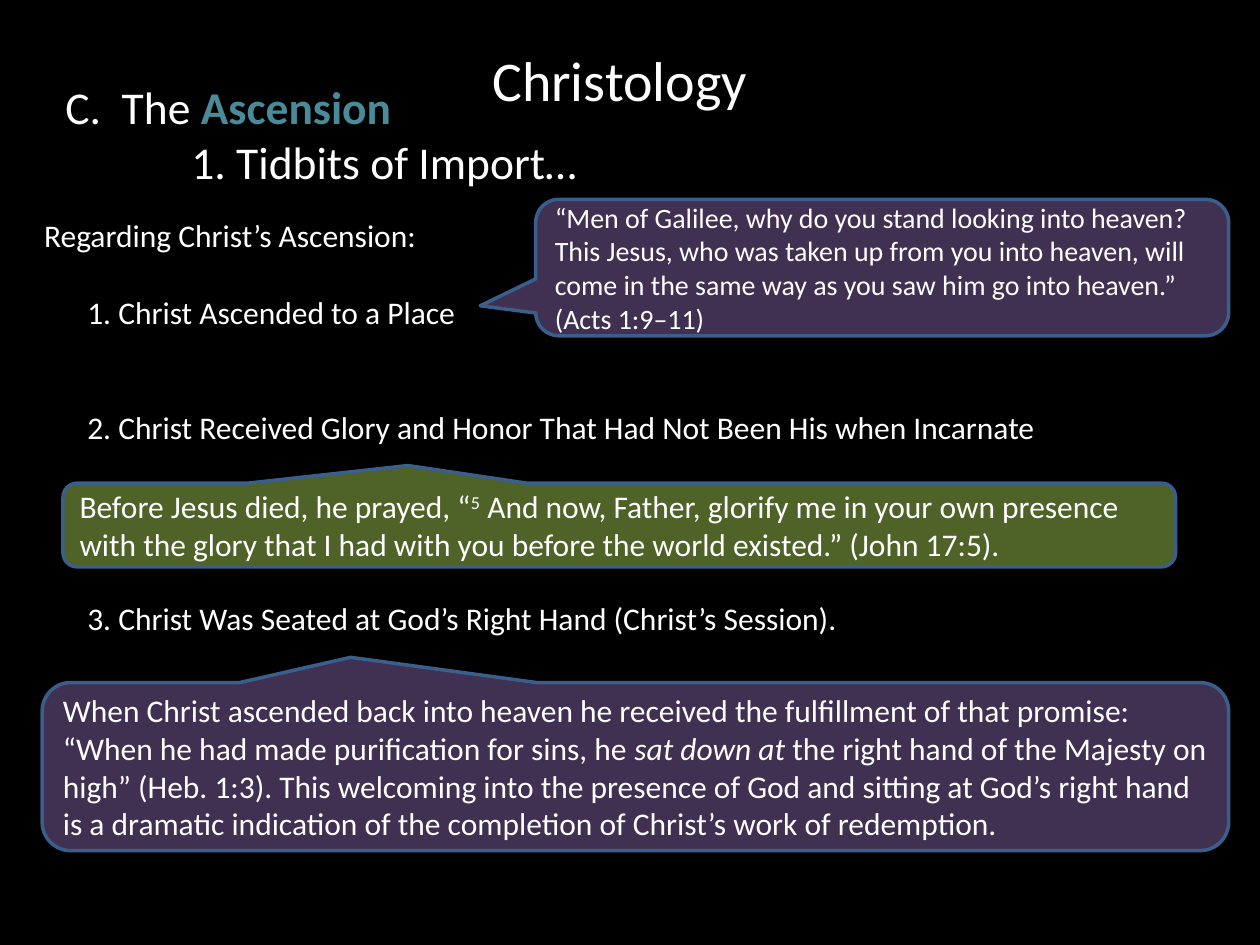
import pptx
import pptx.dml.color
import pptx.enum.shapes
import pptx.enum.text
import pptx.util

Cm = pptx.util.Cm
Pt = pptx.util.Pt
RGBColor = pptx.dml.color.RGBColor
ALIGN = pptx.enum.text.PP_ALIGN
ANCHOR = pptx.enum.text.MSO_ANCHOR

BLACK = RGBColor(0x00, 0x00, 0x00)
WHITE = RGBColor(0xFF, 0xFF, 0xFF)
TEAL = RGBColor(0x4A, 0x8B, 0x9A)
GREEN = RGBColor(0x4F, 0x62, 0x28)
PURPLE = RGBColor(0x40, 0x31, 0x52)
OUTLINE = RGBColor(0x3A, 0x5F, 0x8C)

BODY_LINE = 22  # height in points of one 18 pt line
CORNER = 0.17


def set_values(target, values):
    for name, value in values.items():
        setattr(target, name, value)


def add_span(para, text, size, **values):
    """Add a run; baseline is a percentage that raises the text."""
    baseline = values.pop("baseline", None)
    span = para.add_run()
    span.text = text
    set_values(span.font, {"name": "Calibri", "size": Pt(size)} | values)
    span.font.color.rgb = values.get("color_rgb", WHITE)
    if baseline:
        span._r.get_or_add_rPr().set("baseline", str(baseline * 1000))


def add_para(frame, spans, size, first, indent=0, **values):
    """Add a paragraph of (text, format values) spans."""
    para = frame.paragraphs[0] if first else frame.add_paragraph()
    set_values(para, {"alignment": ALIGN.LEFT} | values)
    if indent:
        para._p.get_or_add_pPr().set("marL", str(Cm(indent)))
    for text, span_values in spans:
        add_span(para, text, size, **span_values)


def fill_frame(frame, paras, size, anchor):
    """Write (spans, paragraph values) pairs into a text frame."""
    set_values(frame, {"word_wrap": True, "vertical_anchor": anchor})
    for number, (spans, values) in enumerate(paras):
        add_para(frame, spans, size, number == 0, **values)


def add_text(page, place, paras, size, anchor=ANCHOR.TOP):
    box = page.shapes.add_textbox(*map(Cm, place))
    fill_frame(box.text_frame, paras, size, anchor)


def add_callout(page, place, tip, color, paras, size=18):
    """Add a rounded callout; tip is its point relative to the centre."""
    kind = pptx.enum.shapes.MSO_SHAPE.ROUNDED_RECTANGULAR_CALLOUT
    callout = page.shapes.add_shape(kind, *map(Cm, place))
    callout.shadow.inherit = False
    for number, value in enumerate((*tip, CORNER)):
        callout.adjustments[number] = value
    callout.fill.solid()
    callout.fill.fore_color.rgb = color
    callout.line.color.rgb = OUTLINE
    callout.line.width = Pt(2)
    fill_frame(callout.text_frame, paras, size, ANCHOR.MIDDLE)


def plain(text, **values):
    return [(text, {})], values


def point(text, lines_before):
    return plain(text, indent=0.87, space_before=Pt(lines_before * BODY_LINE))


def add_headings(page):
    add_text(page, (1.7, 0, 21.59, 3.18),
             [plain("Christology", alignment=ALIGN.CENTER)], 32, ANCHOR.MIDDLE)
    add_text(page, (1.07, 1.47, 23.06, 2.49), [
        ([("C.  The ", {}), ("Ascension", {"bold": True, "color_rgb": TEAL})], {}),
        plain("1. Tidbits of Import…", indent=2.54),
    ], 26)


def add_points(page):
    add_text(page, (0.64, 4.24, 23.06, 9.5), [
        plain("Regarding Christ’s Ascension:"),
        point("1. Christ Ascended to a Place", 1),
        point("2. Christ Received Glory and Honor That Had Not Been His when Incarnate", 2),
        point("3. Christ Was Seated at God’s Right Hand (Christ’s Session).", 4),
    ], 18)


def add_quotations(page):
    add_callout(page, (1.27, 9.74, 22.43, 1.69), (-0.19, -0.71), GREEN, [([
        ("Before Jesus died, he prayed, “", {}),
        ("5", {"baseline": 30}),
        (" And now, Father, glorify me in your own presence with the glory "
         "that I had with you before the world existed.” (John 17:5).", {}),
    ], {})])
    add_callout(page, (0.85, 13.76, 23.92, 3.39), (-0.24, -0.65), PURPLE, [([
        ("When Christ ascended back into heaven he received the fulfillment of "
         "that promise: “When he had made purification for sins, he ", {}),
        ("sat down at ", {"italic": True}),
        ("the right hand of the Majesty on high” (Heb. 1:3). This welcoming into "
         "the presence of God and sitting at God’s right hand is a dramatic "
         "indication of the completion of Christ’s work of redemption.", {}),
    ], {})])
    add_callout(page, (10.8, 4.02, 13.97, 2.75), (-0.58, 0.28), PURPLE, [
        plain("“Men of Galilee, why do you stand looking into heaven?"),
        plain("This Jesus, who was taken up from you into heaven, will come in "
              "the same way as you saw him go into heaven.” (Acts 1:9–11)"),
    ], 16)


def main():
    deck = pptx.Presentation()
    set_values(deck, {"slide_width": Cm(25.4), "slide_height": Cm(19.05)})
    page = deck.slides.add_slide(deck.slide_layouts[6])
    page.background.fill.solid()
    page.background.fill.fore_color.rgb = BLACK
    add_headings(page)
    add_points(page)
    add_quotations(page)
    deck.save("out.pptx")


if __name__ == "__main__":
    main()
